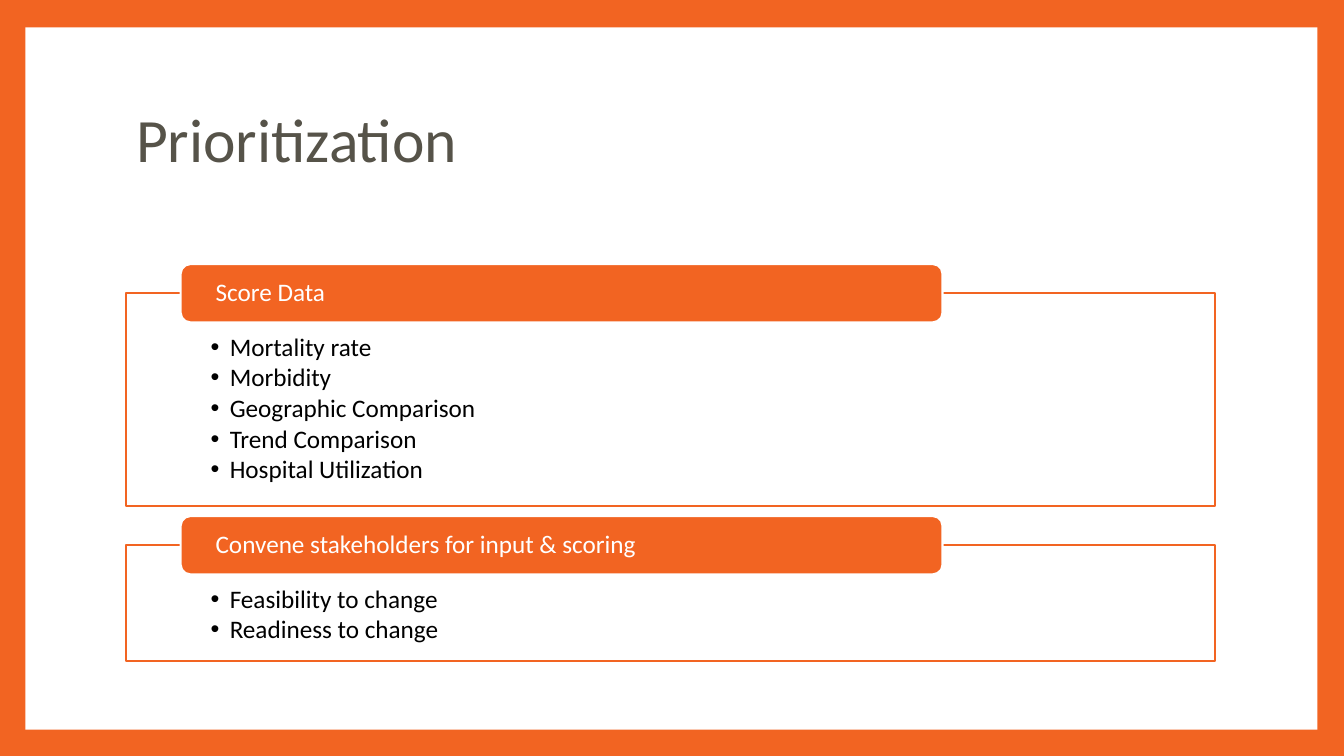
from dataclasses import dataclass

from lxml import etree
from pptx import Presentation
from pptx import util as u
from pptx.dml.color import RGBColor
from pptx.enum import shapes, text
from pptx.oxml.ns import qn


@dataclass(frozen=True)
class Theme:
    font: str = "Calibri"
    accent: str = "F26422"
    paper: str = "FFFFFF"
    heading: str = "565349"
    ink: str = "000000"
    title_size: int = 44
    text_size: int = 18
    line_width: float = 1.5


class SlideBuilder:
    def __init__(self, slide, theme):
        self.slide = slide
        self.theme = theme

    def place(self, part, left, top, width, height):
        part.left, part.top = u.Cm(left), u.Cm(top)
        part.width, part.height = u.Cm(width), u.Cm(height)

    def paint(self, part, fill, line=None):
        part.fill.solid()
        part.fill.fore_color.rgb = RGBColor.from_string(fill)
        if line:
            part.line.color.rgb = RGBColor.from_string(line)
            part.line.width = u.Pt(self.theme.line_width)
        else:
            part.line.fill.background()

    def set_text(self, part, lines, size, color, anchor, insets, space_after=0):
        frame = part.text_frame
        frame.text = "\n".join(lines)
        frame.word_wrap = True
        frame.auto_size = text.MSO_AUTO_SIZE.NONE
        frame.vertical_anchor = anchor
        frame.margin_left, frame.margin_top, frame.margin_right, frame.margin_bottom = map(u.Cm, insets)
        for paragraph in frame.paragraphs:
            paragraph.alignment = text.PP_ALIGN.LEFT
            paragraph.line_spacing = 0.9
            paragraph.space_before = u.Pt(0)
            paragraph.space_after = u.Pt(space_after)
            paragraph.font.name = self.theme.font
            paragraph.font.size = u.Pt(size)
            paragraph.font.color.rgb = RGBColor.from_string(color)

    def background(self):
        fill = self.slide.background.fill
        fill.solid()
        fill.fore_color.rgb = RGBColor.from_string(self.theme.accent)

    def panel(self, left, top, width, height):
        panel = self.slide.shapes.add_shape(
            shapes.MSO_SHAPE.RECTANGLE, u.Cm(left), u.Cm(top), u.Cm(width), u.Cm(height))
        panel.shadow.inherit = False
        self.paint(panel, self.theme.paper)
        self.slide.shapes._spTree.insert(2, panel._element)

    def title(self, heading, left, top, width, height):
        title = self.slide.shapes.title
        self.place(title, left, top, width, height)
        self.set_text(title, [heading], self.theme.title_size, self.theme.heading,
                      text.MSO_ANCHOR.MIDDLE, (0.25, 0.13, 0.25, 0.13))

    def bullet_box(self, body, items, left, top, width, height):
        self.place(body, left, top, width, height)
        self.paint(body, self.theme.paper, self.theme.accent)
        self.set_text(body, items, self.theme.text_size, self.theme.ink,
                      text.MSO_ANCHOR.TOP, (2.13, 1.04, 2.13, 0.36), space_after=2.4)
        for paragraph in body.text_frame.paragraphs:
            properties = paragraph._p.get_or_add_pPr()
            properties.set("marL", str(u.Cm(0.48)))
            properties.set("indent", str(u.Cm(-0.48)))
            bullet = etree.Element(qn("a:buChar"), char="•")
            properties.find(qn("a:defRPr")).addprevious(bullet)

    def tab(self, label, left, top, width, height):
        tab = self.slide.shapes.add_shape(
            shapes.MSO_SHAPE.ROUNDED_RECTANGLE, u.Cm(left), u.Cm(top), u.Cm(width), u.Cm(height))
        tab.shadow.inherit = False
        self.paint(tab, self.theme.accent, self.theme.paper)
        self.set_text(tab, [label], self.theme.text_size, self.theme.paper,
                      text.MSO_ANCHOR.MIDDLE, (0.81, 0, 0.81, 0))


STEPS = [
    ("Score Data", 5.36,
     ["Mortality rate", "Morbidity", "Geographic Comparison", "Trend Comparison", "Hospital Utilization"]),
    ("Convene stakeholders for input & scoring", 2.92,
     ["Feasibility to change", "Readiness to change"]),
]
LEFT, WIDTH = 3.18, 27.43
TAB_HEIGHT, STEP_GAP = 1.47, 0.99


def main():
    deck = Presentation()
    deck.slide_width, deck.slide_height = u.Cm(33.87), u.Cm(19.05)
    two_content = deck.slide_layouts[3]
    slide = deck.slides.add_slide(two_content)
    builder = SlideBuilder(slide, Theme())

    builder.background()
    builder.panel(0.64, 0.69, 32.56, 17.7)
    builder.title("Prioritization", LEFT, 1.7, WIDTH, 3.76)

    top = 7.39
    for idx, (label, height, items) in enumerate(STEPS, start=1):
        builder.bullet_box(slide.placeholders[idx], items, LEFT, top, WIDTH, height)
        builder.tab(label, LEFT + WIDTH / 20, top - TAB_HEIGHT / 2, WIDTH * 0.7, TAB_HEIGHT)
        top += height + STEP_GAP

    deck.save("out.pptx")


if __name__ == "__main__":
    main()
